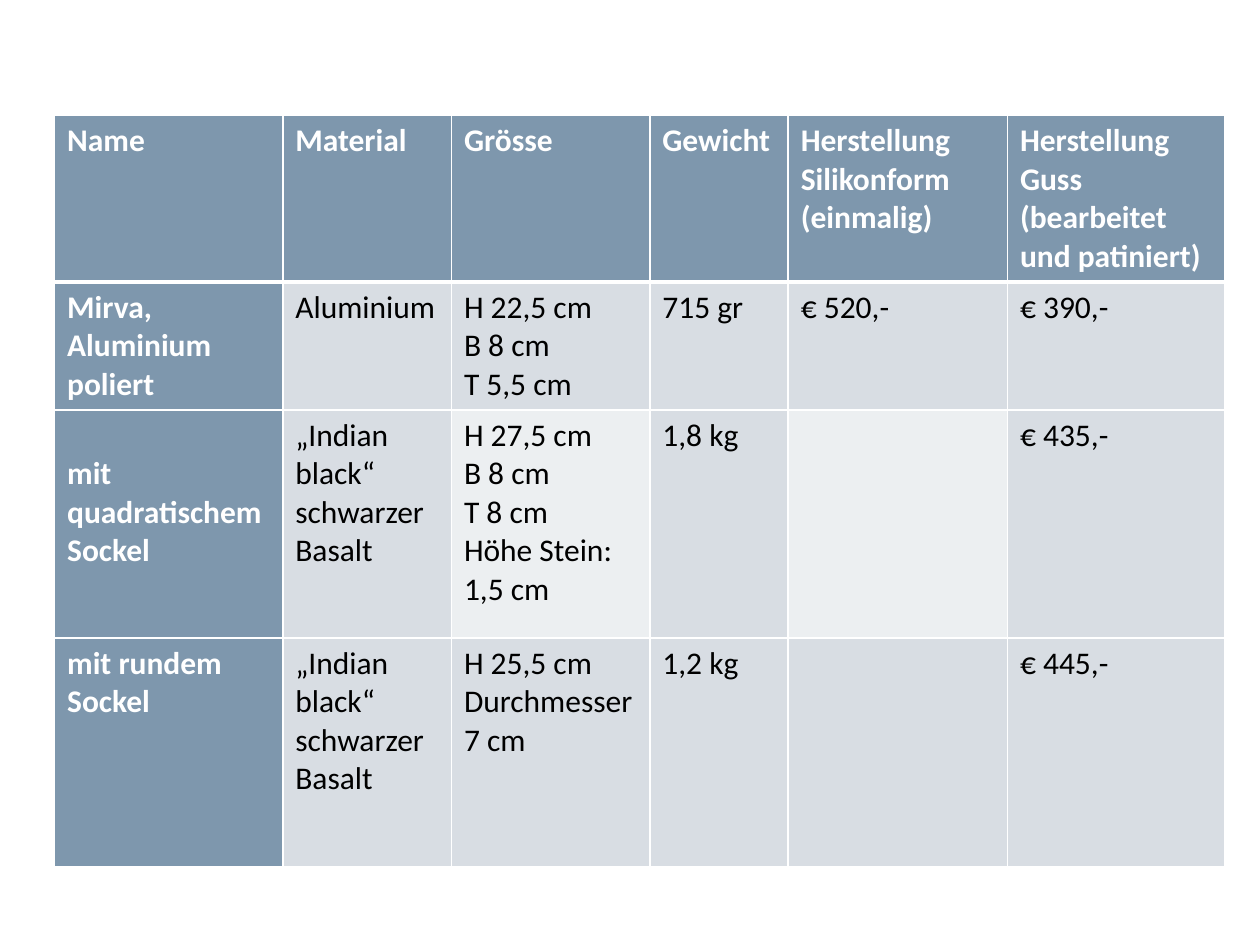
import pptx
import pptx.dml.color
import pptx.oxml.ns
import pptx.util
from lxml import etree

Cm = pptx.util.Cm
Pt = pptx.util.Pt
RGBColor = pptx.dml.color.RGBColor

WHITE = RGBColor(0xFF, 0xFF, 0xFF)
BLACK = RGBColor(0, 0, 0)
HEADER_BLUE = RGBColor(0x7E, 0x97, 0xAD)
BAND_GREY = RGBColor(0xD8, 0xDD, 0xE3)
LIGHT_GREY = RGBColor(0xEC, 0xEF, 0xF1)

HEADING_FONT = {"name": "Calibri", "size": Pt(18), "bold": True}
BODY_FONT = {"name": "Calibri", "size": Pt(18), "bold": False}

COLUMN_WIDTHS = [4.6, 3.4, 4, 2.79, 4.42, 4.39]
ROW_HEIGHTS = [3.35, 2.58, 4.6, 4.6]

BASALT = "„Indian black“\nschwarzer\nBasalt"
PRICE_LIST = [
    ["Name", "Material", "Grösse", "Gewicht",
     "Herstellung Silikonform\n(einmalig)",
     "Herstellung Guss (bearbeitet und patiniert)"],
    ["Mirva, Aluminium poliert", "Aluminium", "H 22,5 cm\nB 8 cm\nT 5,5 cm",
     "715 gr", "€ 520,-", "€ 390,-"],
    ["mit quadratischem Sockel", BASALT,
     "H 27,5 cm\nB 8 cm\nT 8 cm\nHöhe Stein:\n1,5 cm", "1,8 kg", "", "€ 435,-"],
    ["mit rundem\nSockel", BASALT, "H 25,5 cm\nDurchmesser\n7 cm",
     "1,2 kg", "", "€ 445,-"],
]
SQUARE_BASE_ROW = 2
LIGHT_CELLS = {(SQUARE_BASE_ROW, 2), (SQUARE_BASE_ROW, 4)}


def set_borders(cell, widths):
    """Draw white cell borders; widths maps side (L, R, T, B) to points."""
    properties = cell._tc.get_or_add_tcPr()
    qn = pptx.oxml.ns.qn
    for side, width in widths.items():
        line = etree.SubElement(properties, qn(f"a:ln{side}"), w=str(Pt(width)))
        fill = etree.SubElement(line, qn("a:solidFill"))
        etree.SubElement(fill, qn("a:srgbClr"), val=str(WHITE))


def fill_cell(cell, text, row, column):
    is_heading = row == 0 or column == 0

    # Borders, with a heavier rule below the header row
    set_borders(cell, {"L": 1, "R": 1,
                       "T": 3 if row == 1 else 1,
                       "B": 3 if row == 0 else 1})

    # Background
    cell.fill.solid()
    if is_heading:
        cell.fill.fore_color.rgb = HEADER_BLUE
    else:
        cell.fill.fore_color.rgb = LIGHT_GREY if (row, column) in LIGHT_CELLS else BAND_GREY

    # Text, with line breaks inside one paragraph
    cell.text_frame.text = text.replace("\n", "\v")
    paragraph = cell.text_frame.paragraphs[0]
    for attribute, value in (HEADING_FONT if is_heading else BODY_FONT).items():
        setattr(paragraph.font, attribute, value)
        for run in paragraph.runs:
            setattr(run.font, attribute, value)
    for run in paragraph.runs:
        run.font.color.rgb = WHITE if is_heading else BLACK


def add_price_table(slide, left, top, width, height):
    frame = slide.shapes.add_table(len(PRICE_LIST), len(COLUMN_WIDTHS),
                                   left, top, width, height)
    prices = frame.table

    # Column and row proportions within the given box
    for column, share in zip(prices.columns, COLUMN_WIDTHS):
        column.width = int(width * share / sum(COLUMN_WIDTHS))
    for row, share in zip(prices.rows, ROW_HEIGHTS):
        row.height = int(height * share / sum(ROW_HEIGHTS))

    for row, texts in enumerate(PRICE_LIST):
        for column, text in enumerate(texts):
            fill_cell(prices.cell(row, column), text, row, column)

    # The square base's name starts one line lower
    prices.cell(SQUARE_BASE_ROW, 0).margin_top = Cm(0.9)


def main():
    presentation = pptx.Presentation()
    presentation.slide_width = Cm(25.4)
    presentation.slide_height = Cm(19.05)
    slide = presentation.slides.add_slide(presentation.slide_layouts[6])
    add_price_table(slide, Cm(1.1), Cm(2.33),
                    Cm(sum(COLUMN_WIDTHS)), Cm(sum(ROW_HEIGHTS)))
    presentation.save("out.pptx")


if __name__ == "__main__":
    main()
